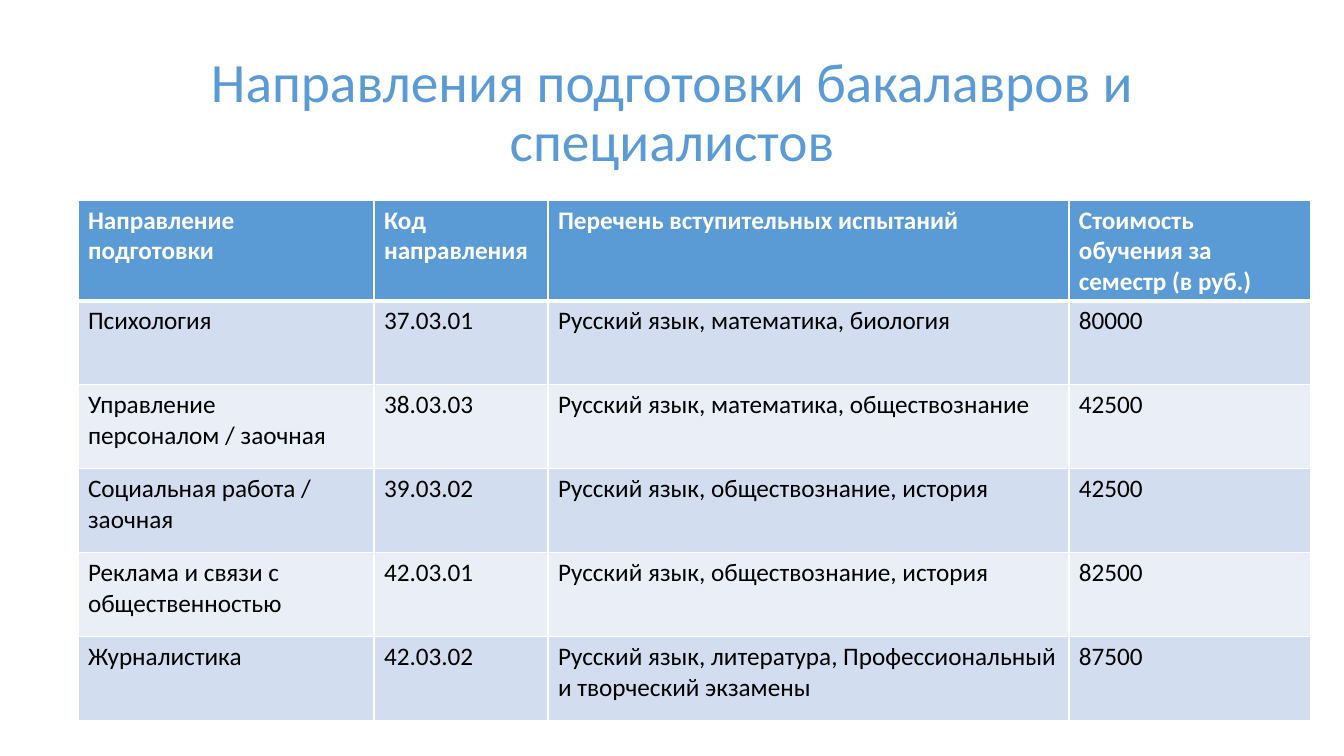
from lxml import etree
from pptx import Presentation
from pptx import util as u
from pptx.dml.color import RGBColor
from pptx.enum import text
from pptx.oxml.ns import qn

# Content
TITLE = "Направления подготовки бакалавров и специалистов"
HEADER = ("Направление подготовки", "Код направления",
          "Перечень вступительных испытаний", "Стоимость обучения за семестр (в руб.)")
PROGRAMMES = [
    ("Психология", "37.03.01", "Русский язык, математика, биология", "80000"),
    ("Управление персоналом / заочная", "38.03.03",
     "Русский язык, математика, обществознание", "42500"),
    ("Социальная работа / заочная", "39.03.02",
     "Русский язык, обществознание, история", "42500"),
    ("Реклама и связи с общественностью", "42.03.01",
     "Русский язык, обществознание, история", "82500"),
    ("Журналистика", "42.03.02",
     "Русский язык, литература, Профессиональный и творческий экзамены", "87500"),
]

# Layout in px and colours
PX_PER_INCH = 100.8
SLIDE_SIZE = (1344, 756)
TITLE_BOX = (101, 69, 1142, 90)
TABLE_LEFT, TABLE_TOP, ROW_HEIGHT = 78, 200, 84
COLUMN_WIDTHS = (296, 174, 521, 242)
BLUE, WHITE, BLACK = "5B9BD5", "FFFFFF", "000000"
BANDS = ("D2DEEF", "EAEFF7")
TITLE_FORMAT = {"size": u.Pt(39.6), "name": "Calibri", "bold": False}
HEADER_FORMAT = {"size": u.Pt(18), "name": "Calibri", "bold": True}
BODY_FORMAT = {**HEADER_FORMAT, "bold": False}


def px(length):
    return u.Emu(round(length * u.Inches(1) / PX_PER_INCH))


def colour(value):
    return RGBColor.from_string(value)


def write(frame, words, font_format, font_colour):
    paragraph = frame.paragraphs[0]
    run = paragraph.add_run()
    run.text = words
    for name, value in font_format.items():
        setattr(run.font, name, value)
    run.font.color.rgb = colour(font_colour)
    return paragraph


def set_borders(cell, widths):
    """Draw white cell borders; widths are points by side."""
    properties = cell._tc.get_or_add_tcPr()
    for index, side in enumerate("LRTB"):
        line = etree.Element(qn(f"a:ln{side}"), w=str(u.Pt(widths.get(side, 1))))
        fill = etree.SubElement(line, qn("a:solidFill"))
        etree.SubElement(fill, qn("a:srgbClr"), val=WHITE)
        properties.insert(index, line)


def add_title(slide):
    frame = slide.shapes.add_textbox(*map(px, TITLE_BOX)).text_frame
    frame.word_wrap = True
    frame.vertical_anchor = text.MSO_ANCHOR.MIDDLE
    paragraph = write(frame, TITLE, TITLE_FORMAT, BLUE)
    paragraph.alignment = text.PP_ALIGN.CENTER
    paragraph.line_spacing = 0.9


def add_programme_table(slide):
    rows = [HEADER, *PROGRAMMES]
    table = slide.shapes.add_table(
        len(rows), len(HEADER), px(TABLE_LEFT), px(TABLE_TOP),
        px(sum(COLUMN_WIDTHS)), px(ROW_HEIGHT * len(rows))).table
    for column, width in zip(table.columns, COLUMN_WIDTHS):
        column.width = px(width)
    for row_index, row in enumerate(rows):
        table.rows[row_index].height = px(ROW_HEIGHT)
        if row_index == 0:
            fill, font_format, font_colour, borders = BLUE, HEADER_FORMAT, WHITE, {"B": 3}
        else:
            fill, font_format, font_colour = BANDS[(row_index - 1) % 2], BODY_FORMAT, BLACK
            borders = {"T": 3} if row_index == 1 else {}
        for column_index, words in enumerate(row):
            cell = table.cell(row_index, column_index)
            cell.fill.solid()
            cell.fill.fore_color.rgb = colour(fill)
            set_borders(cell, borders)
            write(cell.text_frame, words, font_format, font_colour)


def main():
    presentation = Presentation()
    presentation.slide_width, presentation.slide_height = map(px, SLIDE_SIZE)
    slide = presentation.slides.add_slide(presentation.slide_layouts[6])
    add_title(slide)
    add_programme_table(slide)
    presentation.save("out.pptx")


if __name__ == "__main__":
    main()
